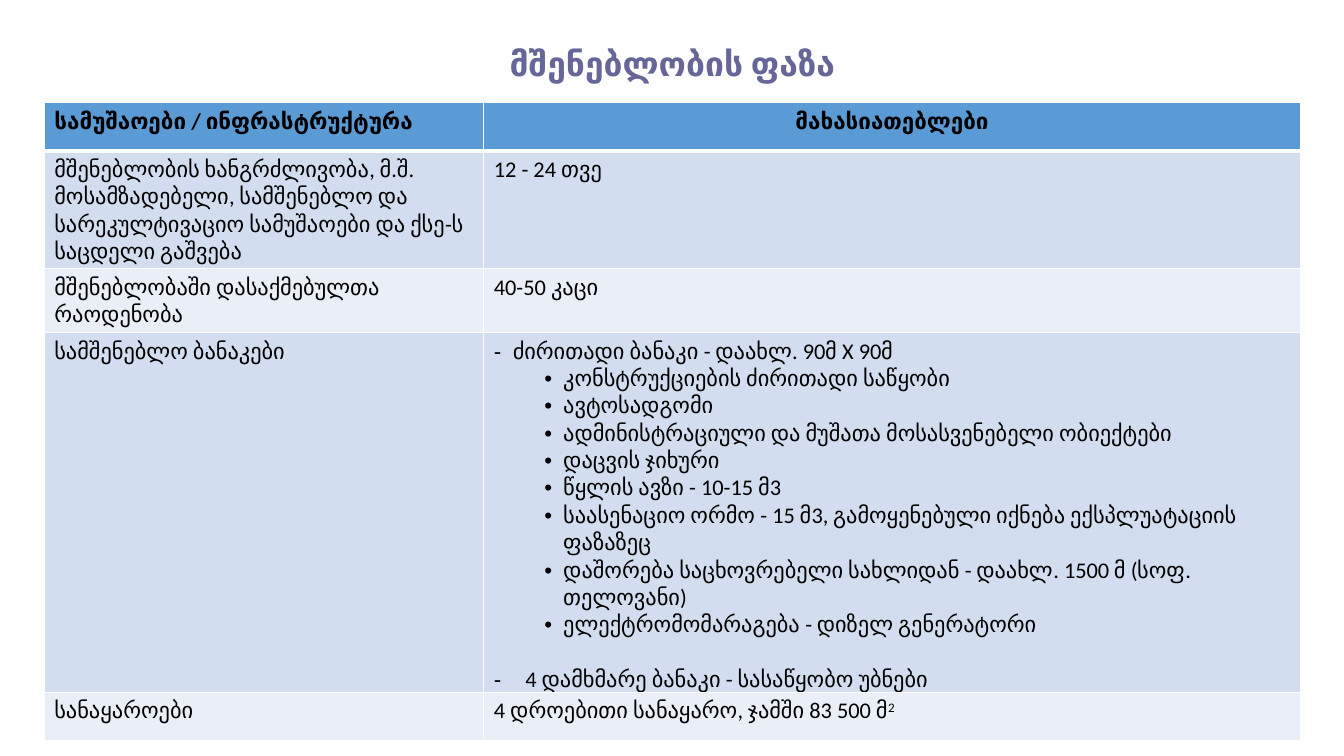
"""Build the construction phase slide: a title over a two-column table."""
import dataclasses

import pptx
import pptx.dml.color
import pptx.enum.text
import pptx.oxml
import pptx.oxml.ns
import pptx.util
from lxml import etree

ALIGN = pptx.enum.text.PP_ALIGN
ANCHOR = pptx.enum.text.MSO_ANCHOR


@dataclasses.dataclass(frozen=True)
class Theme:
    font: str = "Calibri"
    title_size: int = 24
    body_size: int = 16
    title: str = "666699"
    ink: str = "000000"
    header: str = "5B9BD5"
    bands: tuple = ("D2DEEF", "EAEFF7")
    border: str = "FFFFFF"
    thin: int = 1
    thick: int = 3


@dataclasses.dataclass(frozen=True)
class Para:
    text: str
    bullet: str = ""
    indent: float = 0
    hang: float = 0
    before: float = 0
    superscript: str = ""


def rgb(value):
    return pptx.dml.color.RGBColor.from_string(value)


def add_text(p, text, *, font, size, color, bold=False, baseline=0):
    r = p.add_run()
    r.text = text
    r.font.name = font
    r.font.size = pptx.util.Pt(size)
    r.font.bold = bold
    r.font.color.rgb = rgb(color)
    if baseline:
        r.font._element.set("baseline", str(baseline * 1000))


class Deck:
    def __init__(self, theme):
        self.theme = theme
        self.prs = pptx.Presentation()
        self.prs.slide_width = pptx.util.Inches(13.33)
        self.prs.slide_height = pptx.util.Inches(7.5)
        self.s = self.prs.slides.add_slide(self.prs.slide_layouts[6])

    def x(self, percent):
        return round(self.prs.slide_width * percent / 100)

    def y(self, percent):
        return round(self.prs.slide_height * percent / 100)

    def title(self, text, left, top, width, height):
        sp = self.s.shapes.add_textbox(
            self.x(left), self.y(top), self.x(width), self.y(height))
        tf = sp.text_frame
        tf.word_wrap = True
        tf.vertical_anchor = ANCHOR.MIDDLE
        p = tf.paragraphs[0]
        p.alignment = ALIGN.CENTER
        p.line_spacing = 0.9
        add_text(p, text, font=self.theme.font, size=self.theme.title_size,
                 color=self.theme.title, bold=True)

    def table(self, rows, left, top, widths, heights):
        t = self.theme
        frame = self.s.shapes.add_table(
            len(heights), len(widths), self.x(left), self.y(top),
            self.x(sum(widths)), self.y(sum(heights)))
        table = frame.table
        table.first_row = table.horz_banding = False
        for column, width in zip(table.columns, widths):
            column.width = self.x(width)
        for row, height in zip(table.rows, heights):
            row.height = self.y(height)
        for i, row in enumerate(rows):
            fill = t.bands[(i - 1) % 2] if i else t.header
            for j, paras in enumerate(row):
                cell = table.cell(i, j)
                self.borders(cell, top=t.thick if i == 1 else t.thin,
                             bottom=t.thin if i else t.thick)
                cell.fill.solid()
                cell.fill.fore_color.rgb = rgb(fill)
                self.cell_text(cell, paras, bold=i == 0)
        table.cell(0, 1).text_frame.paragraphs[0].alignment = ALIGN.CENTER

    def borders(self, cell, top, bottom):
        tc_pr = cell._tc.get_or_add_tcPr()
        sides = {"L": self.theme.thin, "R": self.theme.thin, "T": top, "B": bottom}
        for side, width in sides.items():
            ln = etree.SubElement(tc_pr, pptx.oxml.ns.qn(f"a:ln{side}"),
                                  w=str(pptx.util.Pt(width)))
            fill = etree.SubElement(ln, pptx.oxml.ns.qn("a:solidFill"))
            etree.SubElement(fill, pptx.oxml.ns.qn("a:srgbClr"),
                             val=self.theme.border)

    def cell_text(self, cell, paras, bold):
        tf = cell.text_frame
        style = dict(font=self.theme.font, size=self.theme.body_size,
                     color=self.theme.ink, bold=bold)
        for k, para in enumerate(paras):
            p = tf.add_paragraph() if k else tf.paragraphs[0]
            if para.before:
                p.space_before = pptx.util.Pt(para.before)
            if para.bullet:
                self.bullet(p, para)
            add_text(p, para.text, **style)
            if para.superscript:
                add_text(p, para.superscript, baseline=30, **style)

    def bullet(self, p, para):
        p_pr = p._p.get_or_add_pPr()
        p_pr.set("marL", str(self.x(para.indent)))
        p_pr.set("indent", str(-self.x(para.hang)))
        etree.SubElement(p_pr, pptx.oxml.ns.qn("a:buFont"), typeface="Arial")
        etree.SubElement(p_pr, pptx.oxml.ns.qn("a:buChar"), char=para.bullet)


CAMP_ITEMS = [
    "კონსტრუქციების ძირითადი საწყობი",
    "ავტოსადგომი",
    "ადმინისტრაციული და მუშათა მოსასვენებელი ობიექტები",
    "დაცვის ჯიხური",
    "წყლის ავზი - 10-15 მ3",
    "საასენაციო ორმო - 15 მ3, გამოყენებული იქნება ექსპლუატაციის ფაზაზეც",
    "დაშორება საცხოვრებელი სახლიდან - დაახლ. 1500 მ (სოფ. თელოვანი)",
    "ელექტრომომარაგება - დიზელ გენერატორი",
]
CAMPS = [
    Para("ძირითადი ბანაკი - დაახლ. 90მ X 90მ", "-", 1.41, 1.41),
    *(Para(item, "•", 5.16, 1.41) for item in CAMP_ITEMS),
    Para("4 დამხმარე ბანაკი - სასაწყობო უბნები", "-", 2.34, 2.34, before=19.5),
]
ROWS = [
    ([Para("სამუშაოები / ინფრასტრუქტურა")], [Para("მახასიათებლები")]),
    ([Para("მშენებლობის ხანგრძლივობა, მ.შ. მოსამზადებელი, სამშენებლო და "
           "სარეკულტივაციო სამუშაოები და ქსე-ს საცდელი გაშვება")],
     [Para("12 - 24 თვე")]),
    ([Para("მშენებლობაში დასაქმებულთა რაოდენობა")], [Para("40-50 კაცი")]),
    ([Para("სამშენებლო ბანაკები")], CAMPS),
    ([Para("სანაყაროები")],
     [Para("4 დროებითი სანაყარო, ჯამში 83 500 მ", superscript="2")]),
]


def main():
    deck = Deck(Theme())
    deck.title("მშენებლობის ფაზა", 6.9, 3.73, 86.27, 9.87)
    deck.table(ROWS, 3.3, 13.6, widths=(32.7, 60.77),
               heights=(6.4, 14.8, 8, 42, 6.4))
    deck.prs.save("out.pptx")


if __name__ == "__main__":
    main()
